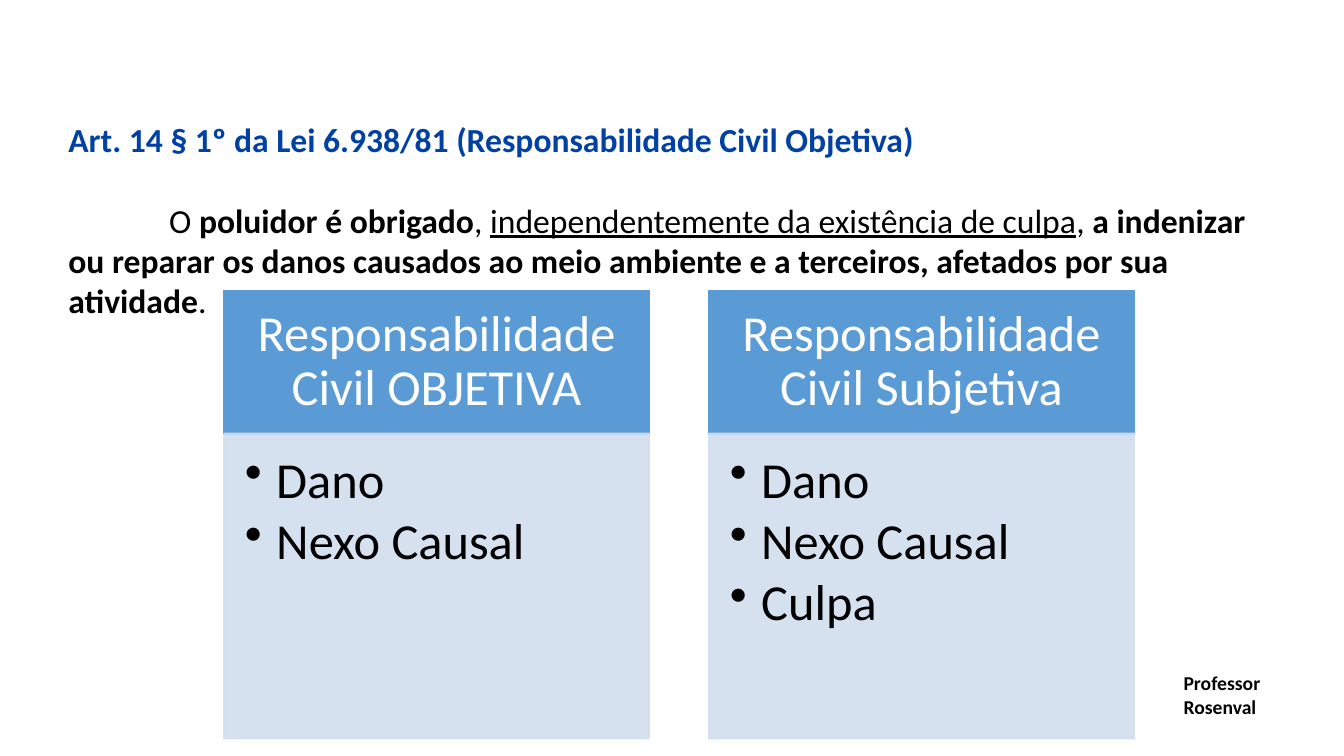
import pptx
import pptx.util
import pptx.dml.color
import pptx.enum.shapes
import pptx.enum.text
import pptx.oxml
import pptx.oxml.ns

Inches = pptx.util.Inches
Pt = pptx.util.Pt
Align = pptx.enum.text.PP_ALIGN
Anchor = pptx.enum.text.MSO_ANCHOR
qn = pptx.oxml.ns.qn
NS = pptx.oxml.ns.nsdecls("a")
COLORS = {"law": "0041A3", "text": "000000", "head": "5B9BD5",
          "body": "D2DEEF", "light": "FFFFFF"}


def style(font, color, **look):
    font.name = "Calibri"
    font.color.rgb = pptx.dml.color.RGBColor.from_string(COLORS[color])
    for key, value in look.items():
        setattr(font, key, value)


def add_box(place, color=None, pad=(0.1, 0.05, 0.1, 0.05), anchor=Anchor.TOP):
    place = [Inches(n) for n in place]
    if color:
        box = slide.shapes.add_shape(
            pptx.enum.shapes.MSO_SHAPE.RECTANGLE, *place)
        box.shadow.inherit = False
        box.fill.solid()
        box.line.width = Pt(1)
        for fill in (box.fill, box.line):
            fore = fill.fore_color if fill is box.fill else fill.color
            fore.rgb = pptx.dml.color.RGBColor.from_string(COLORS[color])
    else:
        box = slide.shapes.add_textbox(*place)
    frame = box.text_frame
    frame.word_wrap = True
    frame.vertical_anchor = anchor
    for side, gap in zip(("left", "top", "right", "bottom"), pad):
        setattr(frame, "margin_" + side, Inches(gap))
    return box


deck = pptx.Presentation()
deck.slide_width, deck.slide_height = Inches(13.33), Inches(7.5)
slide = deck.slides.add_slide(deck.slide_layouts[6])

# Article of law
frame = add_box((0.58, 1.13, 12.18, 2.93)).text_frame
para = frame.paragraphs[0]
run = para.add_run()
run.text = "Art. 14 § 1º da Lei 6.938/81 (Responsabilidade Civil Objetiva)"
style(run.font, "law", size=Pt(24), bold=True)

para = frame.add_paragraph()
para.space_before = Pt(29)
para._p.get_or_add_pPr().set("indent", str(Inches(1)))
for text, look in (
        ("O ", {}),
        ("poluidor é obrigado", {"bold": True}),
        (", ", {}),
        ("independentemente da existência de culpa", {"underline": True}),
        (", ", {}),
        ("a indenizar ou reparar os danos causados ao meio ambiente e a "
         "terceiros, afetados por sua atividade", {"bold": True}),
        (".", {})):
    run = para.add_run()
    run.text = text
    style(run.font, "text", size=Pt(24), **look)

# Two kinds of liability, each a header over a bullet list
KINDS = (("Responsabilidade Civil OBJETIVA", ("Dano", "Nexo Causal")),
         ("Responsabilidade Civil Subjetiva", ("Dano", "Nexo Causal", "Culpa")))
for col, (name, needs) in enumerate(KINDS):
    left = 2.22 + col * 4.81
    head = add_box((left, 2.88, 4.22, 1.43), "head",
                   (0.28, 0.16, 0.28, 0.16), Anchor.MIDDLE)
    para = head.text_frame.paragraphs[0]
    para.text = name
    para.alignment = Align.CENTER
    para.line_spacing = 0.9
    style(para.runs[0].font, "light", size=Pt(36))

    body = add_box((left, 4.3, 4.22, 3.03), "body", (0.21, 0.21, 0.28, 0.32))
    for tone in body._element.spPr.iter(qn("a:srgbClr")):
        tone.append(pptx.oxml.parse_xml(f'<a:alpha {NS} val="90000"/>'))
    frame = body.text_frame
    for row, need in enumerate(needs):
        para = frame.add_paragraph() if row else frame.paragraphs[0]
        para.text = need
        para.level = 1
        para.alignment = Align.LEFT
        para.line_spacing = 0.9
        para.space_after = Pt(5)
        props = para._p.get_or_add_pPr()
        props.set("marL", str(Inches(0.31)))
        props.set("indent", str(Inches(-0.31)))
        props.append(pptx.oxml.parse_xml(f'<a:buChar {NS} char="•"/>'))
        style(para.runs[0].font, "text", size=Pt(36))

# Teacher's name
para = add_box((11.64, 6.61, 1.12, 0.57)).text_frame.paragraphs[0]
para.text = "Professor Rosenval"
style(para.runs[0].font, "text", size=Pt(14), bold=True)

deck.save("out.pptx")
